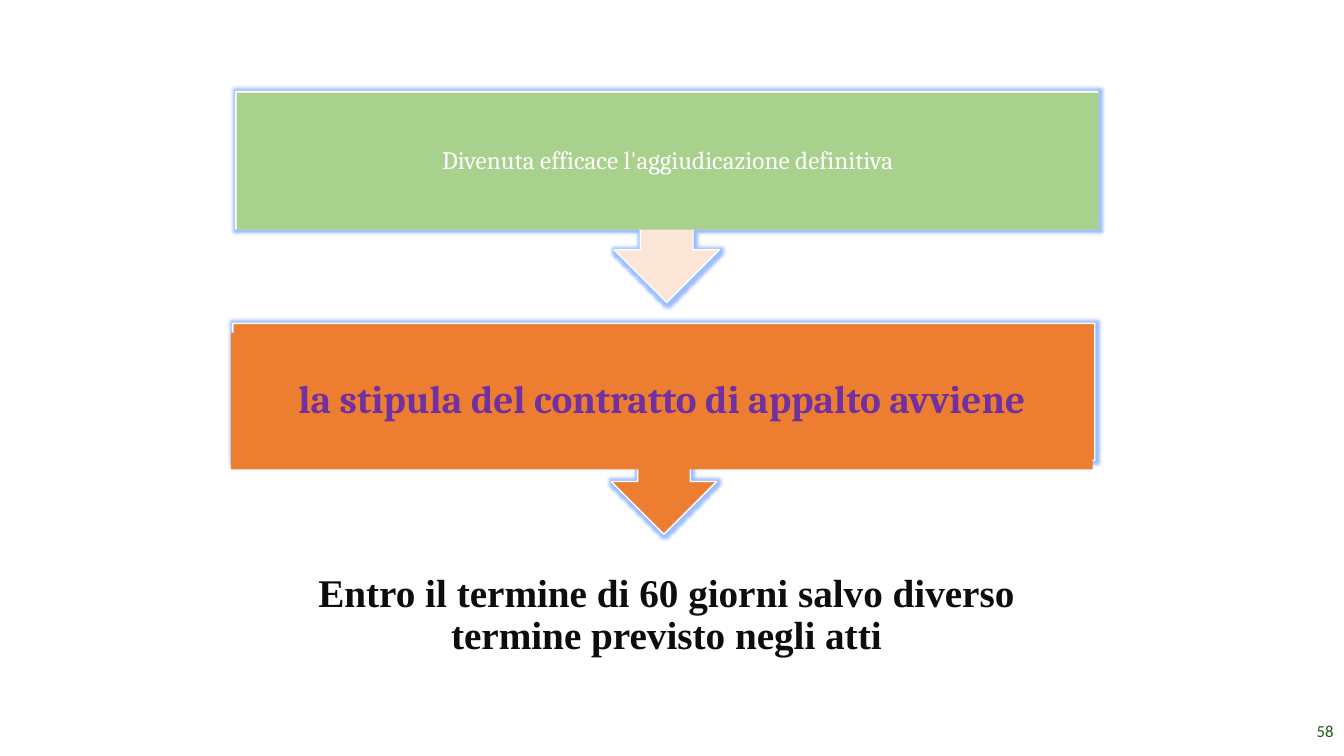
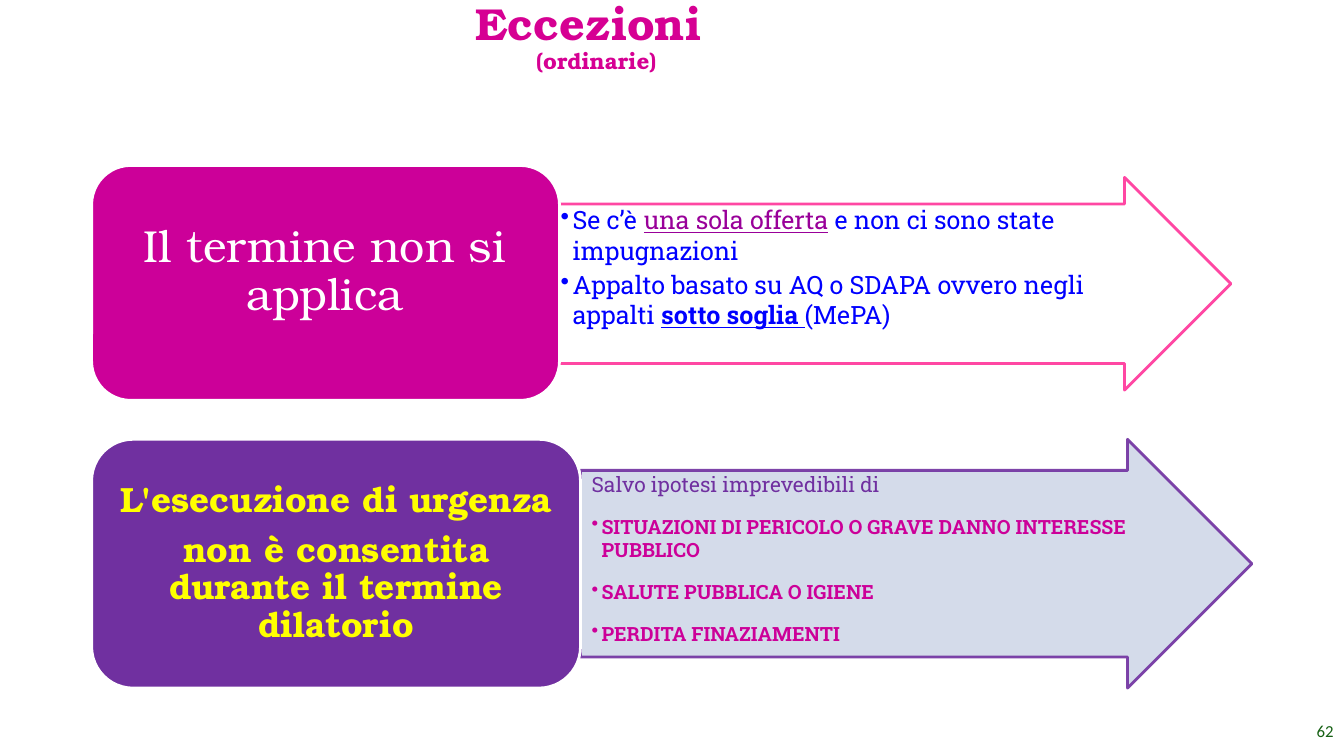
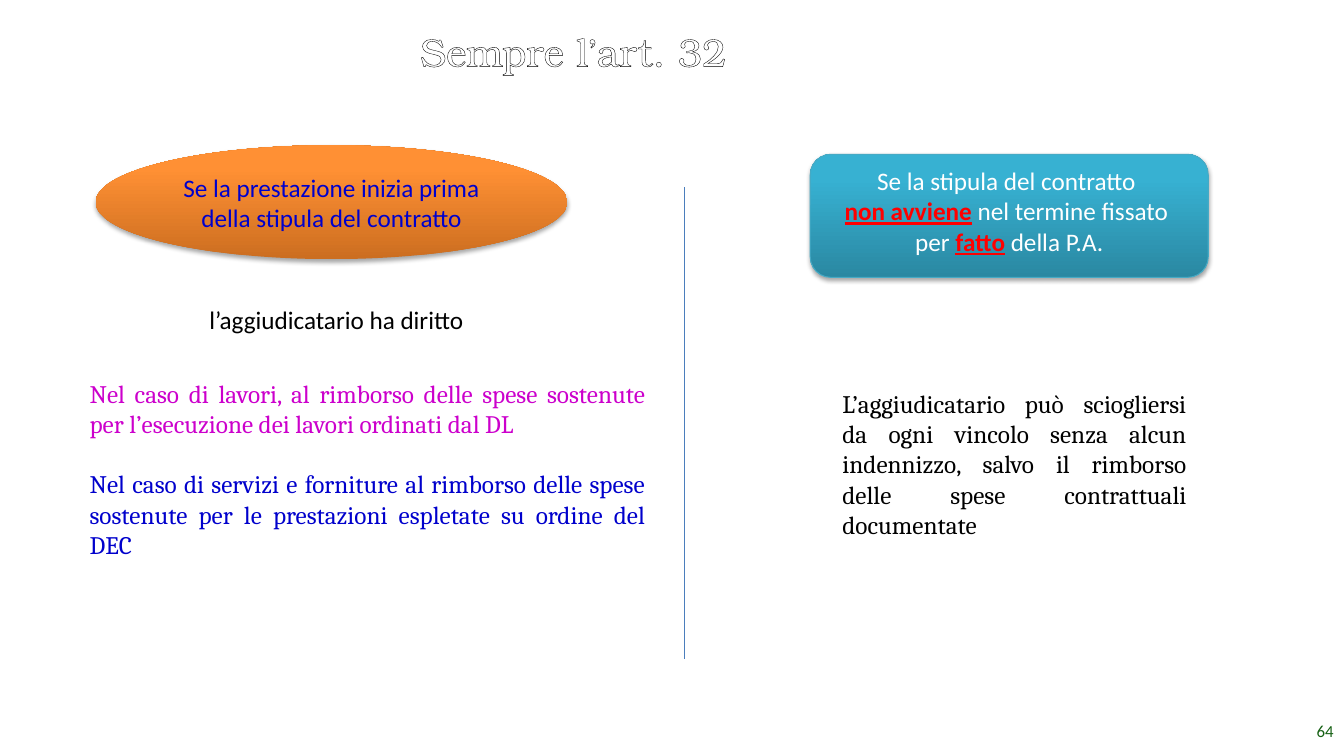
from copy import deepcopy
from dataclasses import dataclass, replace
from typing import Optional, Sequence

from lxml import etree
from pptx import Presentation
from pptx.dml.color import RGBColor
from pptx.enum import shapes, text
from pptx.oxml import ns
from pptx.util import Cm, Pt

WHITE = RGBColor(0xFF, 0xFF, 0xFF)
BLACK = RGBColor(0x00, 0x00, 0x00)
INK = RGBColor(0x0D, 0x0D, 0x0D)
DARK_GREEN = RGBColor(0x15, 0x60, 0x13)
LIGHT_GREEN = RGBColor(0xA9, 0xD1, 0x8E)
ORANGE = RGBColor(0xED, 0x7D, 0x31)
PEACH = RGBColor(0xFB, 0xE5, 0xD6)
PURPLE = RGBColor(0x70, 0x30, 0xA0)
TITLE_PINK = RGBColor(0xD6, 0x00, 0x93)
HOT_PINK = RGBColor(0xFF, 0x33, 0x99)
MAGENTA = RGBColor(0xCC, 0x00, 0x99)
VIOLET = RGBColor(0x99, 0x00, 0x99)
ORCHID = RGBColor(0xCC, 0x00, 0xCC)
BLUE = RGBColor(0x00, 0x00, 0xFF)
NAVY = RGBColor(0x00, 0x00, 0xCC)
PALE_BLUE = RGBColor(0xD0, 0xD8, 0xE8)
RED = RGBColor(0xFF, 0x00, 0x00)
YELLOW = RGBColor(0xFF, 0xFF, 0x00)
DIVIDER_BLUE = RGBColor(0x4B, 0x7E, 0xBC)
TEAL_LINE = RGBColor(0x46, 0xAA, 0xC5)
ORANGE_GRADIENT = (RGBColor(0xCC, 0x6E, 0x20), RGBColor(0xFF, 0x90, 0x34))
TEAL_GRADIENT = (RGBColor(0x2A, 0x88, 0xA2), RGBColor(0x37, 0xB1, 0xD2))

GLOW = '<a:glow xmlns:a="{}" rad="63500"><a:srgbClr val="5B93FF"><a:alpha val="60000"/></a:srgbClr></a:glow>'
SHADOW = (
    '<a:outerShdw xmlns:a="{}" blurRad="40000" dist="23000" dir="5400000" rotWithShape="0">'
    '<a:srgbClr val="000000"><a:alpha val="35000"/></a:srgbClr></a:outerShdw>'
)
TEXT_OUTLINE = (
    '<a:ln xmlns:a="{}" w="9525"><a:solidFill><a:srgbClr val="000000"/></a:solidFill></a:ln>'
)

Align = text.PP_ALIGN
Anchor = text.MSO_ANCHOR
Preset = shapes.MSO_SHAPE
Insets = tuple[float, float]
DEFAULT_INSETS: Insets = (0.25, 0.13)
NARROW_INSETS: Insets = (0.03, 0.03)
RECTANGLE_INSETS: Insets = (0.76, 0.76)


@dataclass(frozen=True)
class Frame:
    """Position and size in centimetres."""

    left: float
    top: float
    width: float
    height: float

    def lengths(self) -> tuple:
        """Return the four values as lengths."""
        return Cm(self.left), Cm(self.top), Cm(self.width), Cm(self.height)


@dataclass(frozen=True)
class Style:
    """Character formatting of a run."""

    font: str
    size: float
    color: RGBColor
    bold: bool = False
    underline: bool = False
    outlined: bool = False


@dataclass(frozen=True)
class Line:
    """A paragraph made of (text, style) runs, where a newline is a break."""

    runs: Sequence[tuple[str, Style]]
    align: Align = Align.LEFT
    spacing: float = 1.0
    before: float = 0
    margin: float = 0
    bullet: Optional[float] = None


@dataclass(frozen=True)
class Look:
    """Fill, outline and effect of a shape."""

    fill: RGBColor | tuple[RGBColor, RGBColor]
    line: Optional[RGBColor] = None
    width: float = 1
    effect: str = ""
    alpha: int = 100


@dataclass(frozen=True)
class ArrowRow:
    """A rounded label with an arrow of details behind it."""

    label: Frame
    label_text: Frame
    label_fill: RGBColor
    label_lines: Sequence[Line]
    arrow: Frame
    arrow_text: Frame
    arrow_look: Look
    arrow_lines: Sequence[Line]


@dataclass(frozen=True)
class Step:
    """A callout with a text rectangle on its body."""

    callout: Frame
    callout_fill: RGBColor
    rectangle: Frame
    rectangle_fill: RGBColor
    wording: str
    style: Style


def element(xml: str):
    """Parse a drawing element from its template."""
    return etree.fromstring(xml.format(ns.nsdecls("a").split('"')[1]))


def write(shape, lines: Sequence[Line], anchor=Anchor.TOP, insets: Insets = DEFAULT_INSETS) -> None:
    """Fill a shape with formatted paragraphs."""
    frame = shape.text_frame
    frame.word_wrap = True
    frame.auto_size = text.MSO_AUTO_SIZE.NONE
    frame.vertical_anchor = anchor
    frame.margin_left = frame.margin_right = Cm(insets[0])
    frame.margin_top = frame.margin_bottom = Cm(insets[1])
    for index, line in enumerate(lines):
        paragraph = frame.add_paragraph() if index else frame.paragraphs[0]
        properties = paragraph._p.get_or_add_pPr()
        properties.set("marL", str(Cm(line.margin)))
        properties.set("indent", str(-Cm(line.bullet or 0)))
        if line.bullet:
            etree.SubElement(properties, ns.qn("a:buChar")).set("char", "•")
        paragraph.alignment = line.align
        paragraph.line_spacing = line.spacing
        paragraph.space_before = Pt(line.before)
        for wording, style in line.runs:
            if wording == "\n":
                paragraph.add_line_break()
                previous, line_break = paragraph._p[-2], paragraph._p[-1]
                line_break.append(deepcopy(previous.rPr))
                continue
            run = paragraph.add_run()
            run.text = wording
            run.font.name = style.font
            run.font.size = Pt(style.size)
            run.font.bold = style.bold
            run.font.underline = style.underline
            run.font.color.rgb = style.color
            if style.outlined:
                run._r.get_or_add_rPr().insert(0, element(TEXT_OUTLINE))


def add_text(slide, frame: Frame, lines: Sequence[Line], anchor=Anchor.TOP,
             insets: Insets = DEFAULT_INSETS) -> None:
    """Add a text box."""
    write(slide.shapes.add_textbox(*frame.lengths()), lines, anchor, insets)


def add_shape(slide, preset: Preset, frame: Frame, look: Look):
    """Add a preset shape with its look."""
    shape = slide.shapes.add_shape(preset, *frame.lengths())
    shape.shadow.inherit = False
    if isinstance(look.fill, RGBColor):
        shape.fill.solid()
        shape.fill.fore_color.rgb = look.fill
    else:
        shape.fill.gradient()
        shape.fill.gradient_angle = 90
        for stop, position, color in zip(shape.fill.gradient_stops, (0, 0.8), look.fill):
            stop.position = position
            stop.color.rgb = color
    if look.line is None:
        shape.line.fill.background()
    else:
        shape.line.color.rgb = look.line
        shape.line.width = Pt(look.width)
    properties = shape._element.spPr
    if look.alpha < 100:
        for color in list(properties.iter(ns.qn("a:srgbClr"))):
            etree.SubElement(color, ns.qn("a:alpha")).set("val", str(look.alpha * 1000))
    if look.effect:
        properties.find(ns.qn("a:effectLst")).append(element(look.effect))
    return shape


def add_slide(presentation, number: int, title: Optional[Line] = None,
              title_frame: Optional[Frame] = None):
    """Add a slide with its number and, if given, its title."""
    slide = presentation.slides.add_slide(presentation.slide_layouts[5 if title else 6])
    if title:
        placeholder = slide.shapes.title
        placeholder.left, placeholder.top, placeholder.width, placeholder.height = title_frame.lengths()
        write(placeholder, [title], Anchor.MIDDLE)
    number_line = Line([(str(number), Style("Calibri", 12, DARK_GREEN))], Align.RIGHT)
    add_text(slide, Frame(28.58, 17.78, 5.28, 1.27), [number_line], Anchor.MIDDLE)
    return slide


def add_step(slide, step: Step) -> None:
    """Draw a step of the process."""
    callout = add_shape(slide, Preset.UP_ARROW_CALLOUT, step.callout,
                        Look(step.callout_fill, WHITE, effect=GLOW))
    callout.rotation = 180
    rectangle = add_shape(slide, Preset.RECTANGLE, step.rectangle, Look(step.rectangle_fill))
    line = Line([(step.wording, step.style)], Align.CENTER, 0.9)
    write(rectangle, [line], Anchor.MIDDLE, RECTANGLE_INSETS)


def add_arrow_row(slide, row: ArrowRow) -> None:
    """Draw a label and its arrow."""
    arrow = add_shape(slide, Preset.RIGHT_ARROW, row.arrow, row.arrow_look)
    arrow.adjustments[0] = 0.75
    add_text(slide, row.arrow_text, row.arrow_lines, insets=NARROW_INSETS)
    add_shape(slide, Preset.ROUNDED_RECTANGLE, row.label, Look(row.label_fill, WHITE, 2))
    add_text(slide, row.label_text, row.label_lines, Anchor.MIDDLE)


def build_contract(presentation) -> None:
    """Build the slide on signing the contract."""
    slide = add_slide(presentation, 58)
    closing = Line([("Entro il termine di 60 giorni salvo diverso termine previsto negli atti",
                     Style("Times New Roman", 28, INK, bold=True))], Align.CENTER, 0.9)
    add_text(slide, Frame(7.09, 13.87, 19.41, 3.3), [closing], Anchor.MIDDLE, (0.71, 0.71))
    steps = (
        Step(Frame(5.87, 8.15, 21.72, 5.31), ORANGE, Frame(5.82, 8.38, 21.72, 3.45), ORANGE,
             "la stipula del contratto di appalto avviene", Style("Cambria", 28, PURPLE, bold=True)),
        Step(Frame(5.94, 2.31, 21.72, 5.31), PEACH, Frame(5.97, 2.34, 21.72, 3.45), LIGHT_GREEN,
             "Divenuta efficace l'aggiudicazione definitiva", Style("Cambria", 18, WHITE)),
    )
    for step in steps:
        add_step(slide, step)


def build_exceptions(presentation) -> None:
    """Build the slide on ordinary exceptions."""
    heading = Style("TeX Gyre Bonum", 32, TITLE_PINK, bold=True, outlined=True)
    title = Line([("Eccezioni ", heading), ("\n", heading), ("(ordinarie)", replace(heading, size=16))],
                 Align.CENTER, 0.9)
    slide = add_slide(presentation, 62, title, Frame(11.73, 0, 6.6, 1.93))
    body = Style("Roboto Slab", 18, BLUE)
    label = Style("TeX Gyre Bonum", 32, WHITE)
    urgent = replace(label, size=25, color=YELLOW, bold=True)
    case = replace(body, size=14, color=MAGENTA, bold=True)
    cases = ("SITUAZIONI DI PERICOLO O GRAVE DANNO INTERESSE PUBBLICO",
             "SALUTE PUBBLICA O IGIENE", "PERDITA FINAZIAMENTI")
    rows = (
        ArrowRow(
            Frame(2.31, 4.17, 11.79, 5.92), Frame(2.69, 4.47, 11, 4.78), MAGENTA,
            [Line([("Il termine non si applica", label)], Align.CENTER, 0.9)],
            Frame(14.1, 4.47, 16.92, 5.36), Frame(14.1, 5.13, 14.48, 4.01),
            Look(WHITE, HOT_PINK, 2, alpha=90),
            [Line([("Se c’è ", body),
                   ("una sola offerta", replace(body, color=VIOLET, underline=True)),
                   (" e non ci sono state impugnazioni", body)], margin=0.3, bullet=0.3),
             Line([("Appalto basato su AQ o SDAPA ovvero negli appalti ", body),
                   ("sotto soglia ", replace(body, bold=True, underline=True)),
                   ("(MePA)", body)], before=3, margin=0.3, bullet=0.3)],
        ),
        ArrowRow(
            Frame(2.31, 11.07, 12.32, 6.27), Frame(2.72, 11.38, 11.51, 5.64), PURPLE,
            [Line([("L'esecuzione di urgenza", urgent)], Align.CENTER, 0.9),
             Line([("non è consentita durante il termine dilatorio", urgent)], Align.CENTER, 0.9, 8.75)],
            Frame(14.63, 11.07, 16.92, 6.27), Frame(14.63, 11.84, 14.05, 4.7),
            Look(PALE_BLUE, PURPLE, 2, alpha=90),
            [Line([("Salvo ipotesi imprevedibili di", replace(body, size=15, color=PURPLE))], margin=0.25),
             *(Line([(wording, case)], before=13, margin=0.5, bullet=0.25) for wording in cases)],
        ),
    )
    for row in rows:
        add_arrow_row(slide, row)


def build_article(presentation) -> None:
    """Build the slide on article 32."""
    heading = Style("TeX Gyre Bonum", 28, WHITE, outlined=True)
    slide = add_slide(presentation, 64, Line([("Sempre l’art. 32", heading)], spacing=0.9),
                      Frame(10.34, -0.23, 13.23, 3.18))
    serif = Style("Cambria", 18, BLACK)
    plain = Style("Calibri", 18, WHITE)
    strong = replace(plain, color=RED, bold=True, underline=True)
    add_text(slide, Frame(2.01, 9.4, 14.5, 5.64), [
        Line([("Nel caso di lavori, al rimborso delle spese sostenute per l’esecuzione dei lavori "
               "ordinati dal DL", replace(serif, color=ORCHID))], Align.JUSTIFY),
        Line([("Nel caso di servizi e forniture al rimborso delle spese sostenute per le prestazioni "
               "espletate su ordine del DEC", replace(serif, color=NAVY))], Align.JUSTIFY, before=21.5),
    ])
    add_text(slide, Frame(5.03, 7.54, 7.21, 1.02),
             [Line([("l’aggiudicatario ha diritto", replace(plain, color=BLACK))])])
    add_text(slide, Frame(20.98, 9.65, 9.17, 4.11), [
        Line([("L’aggiudicatario può sciogliersi da ogni vincolo senza alcun indennizzo, salvo il "
               "rimborso delle spese contrattuali documentate", serif)], Align.JUSTIFY),
    ])
    ellipse = add_shape(slide, Preset.OVAL, Frame(2.41, 3.66, 11.89, 2.87),
                        Look(ORANGE_GRADIENT, effect=SHADOW))
    write(ellipse, [Line([("Se la prestazione inizia prima della stipula del contratto",
                           replace(plain, color=NAVY))], Align.CENTER)], Anchor.MIDDLE)
    divider = slide.shapes.add_connector(shapes.MSO_CONNECTOR.STRAIGHT,
                                         Cm(17.25), Cm(4.72), Cm(17.25), Cm(16.61))
    divider.line.color.rgb = DIVIDER_BLUE
    divider.line.width = Pt(0.75)
    etree.SubElement(divider._element.spPr, ns.qn("a:effectLst"))
    condition = add_shape(slide, Preset.ROUNDED_RECTANGLE, Frame(20.42, 3.89, 10.03, 3.1),
                          Look(TEAL_GRADIENT, TEAL_LINE, 0.75, SHADOW))
    write(condition, [
        Line([("Se la stipula del contratto ", plain)], Align.CENTER),
        Line([("non avviene", strong), (" nel termine fissato ", plain)], Align.CENTER),
        Line([("per ", plain), ("fatto", strong), (" della P.A.", plain)], Align.CENTER),
    ])


def main() -> None:
    """Build and save the presentation."""
    presentation = Presentation()
    presentation.slide_width, presentation.slide_height = Cm(33.87), Cm(19.05)
    build_contract(presentation)
    build_exceptions(presentation)
    build_article(presentation)
    presentation.save("out.pptx")


if __name__ == "__main__":
    main()
